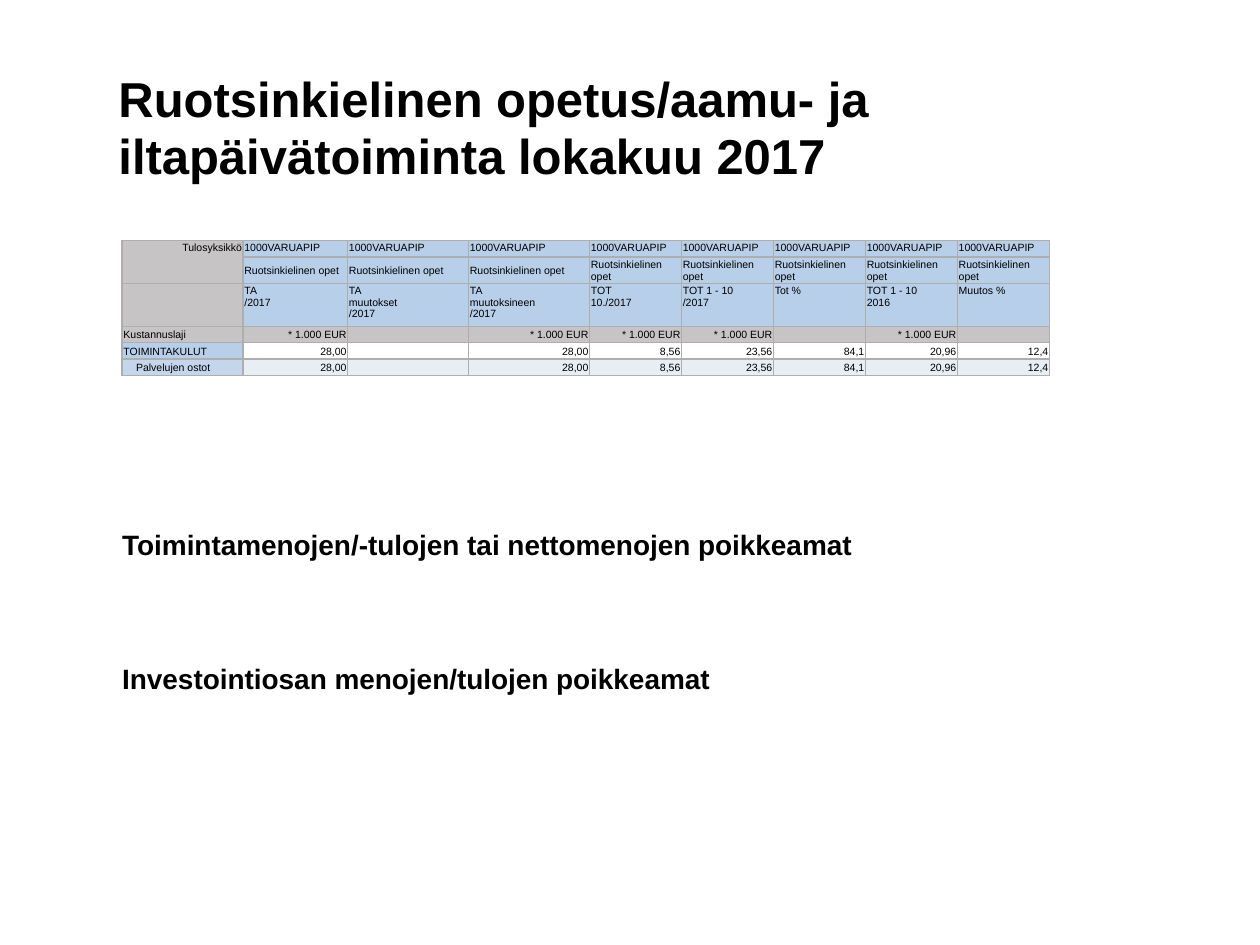
from lxml.etree import SubElement
from pptx import Presentation
from pptx.dml.color import RGBColor
from pptx.enum.text import MSO_ANCHOR as Anchor, PP_ALIGN as Align
from pptx.oxml.ns import qn
from pptx.util import Inches, Pt

BLUE, PALE_BLUE, GREY = "B7CFE8", "C3D6EB", "C6C4C4"
WHITE, PALE, BORDER, BLACK = "FFFFFF", "E9EEF4", "AEAEAE", "000000"


def colour(hex_value):
    return RGBColor.from_string(hex_value)


class BudgetSlide:
    font = "Arial"

    def __init__(self, deck):
        self.page = deck.slides.add_slide(deck.slide_layouts[6])

    def apply(self, target, values):
        for name, value in values.items():
            setattr(target, name, value)

    def style(self, para, size, bold=False):
        values = {"name": self.font, "size": Pt(size), "bold": bold}
        for span in para.runs:
            self.apply(span.font, values)
            span.font.color.rgb = colour(BLACK)
        # Line breaks and empty paragraphs carry their own text size
        for line_break in para._p.findall(qn("a:br")):
            SubElement(line_break, qn("a:rPr"), sz=str(size * 100))
        if not para.runs:
            SubElement(para._p, qn("a:endParaRPr"), sz=str(size * 100))

    def text(self, place, lines, size, frame_values, gap=0, line_height=None):
        box = self.page.shapes.add_textbox(*map(Inches, place))
        frame = box.text_frame
        margins = dict.fromkeys(
            ("margin_left", "margin_top", "margin_right", "margin_bottom"), 0)
        self.apply(frame, {"word_wrap": True, **margins, **frame_values})
        for index, line in enumerate(lines):
            para = frame.add_paragraph() if index else frame.paragraphs[0]
            para.text = line
            if index:
                para.space_before = Pt(gap)
            if line_height:
                para.line_spacing = Pt(line_height)
            self.style(para, size, bold=True)

    def table(self, left, top, widths, heights):
        shape = self.page.shapes.add_table(
            len(heights), len(widths), Inches(left), Inches(top),
            Inches(sum(widths)), Inches(sum(heights)))
        grid = shape.table
        self.apply(grid, {"first_row": False, "horz_banding": False})
        for column, width in zip(grid.columns, widths):
            column.width = Inches(width)
        for row, height in zip(grid.rows, heights):
            row.height = Inches(height)
        return grid

    def cell(self, cell, words, fill, align, anchor, indent=0.01):
        self.apply(cell, {
            "margin_left": Inches(indent), "margin_top": Inches(0.01),
            "margin_right": Inches(0.01), "margin_bottom": 0,
            "vertical_anchor": anchor})
        para = cell.text_frame.paragraphs[0]
        para.text = words
        para.alignment = align
        self.style(para, 6)
        self.borders(cell)
        cell.fill.solid()
        cell.fill.fore_color.rgb = colour(fill)

    def borders(self, cell):
        properties = cell._tc.get_or_add_tcPr()
        for side in ("lnL", "lnR", "lnT", "lnB"):
            line = SubElement(properties, qn(f"a:{side}"), w=str(Pt(1)))
            solid = SubElement(line, qn("a:solidFill"))
            SubElement(solid, qn("a:srgbClr"), val=BORDER)


deck = Presentation()
deck.slide_width, deck.slide_height = Inches(10), Inches(7.5)
slide = BudgetSlide(deck)

# Title
slide.text((0.94, 0.55, 8.11, 1.09),
           ["Ruotsinkielinen opetus/aamu- ja iltapäivätoiminta lokakuu 2017"],
           28, {"margin_right": Inches(0.1)}, line_height=33)

# Headings for the deviations
slide.text((0.97, 3.64, 8.6, 2.96),
           ["Toimintamenojen/-tulojen tai nettomenojen poikkeamat",
            "Investointiosan menojen/tulojen poikkeamat"],
           16, {"margin_top": Inches(0.55)}, gap=57)

# Budget table: words, label fill, value fill, value alignment, anchor
unit = "* 1.000 EUR"
amounts = ["28,00", "", "28,00", "8,56", "23,56", "84,1", "20,96", "12,4"]
periods = ["TA\n/2017", "TA\nmuutokset\n/2017", "TA\nmuutoksineen\n/2017",
           "TOT\n10./2017", "TOT 1 - 10\n/2017", "Tot %",
           "TOT 1 - 10\n2016", "Muutos %"]
rows = [
    (["Tulosyksikkö"] + ["1000VARUAPIP"] * 8, GREY, BLUE, Align.LEFT, Anchor.TOP),
    ([""] + ["Ruotsinkielinen opet"] * 8, GREY, BLUE, Align.LEFT, Anchor.MIDDLE),
    ([""] + periods, GREY, BLUE, Align.LEFT, Anchor.TOP),
    (["Kustannuslaji", unit, "", unit, unit, unit, "", unit, ""],
     GREY, GREY, Align.RIGHT, Anchor.MIDDLE),
    (["TOIMINTAKULUT"] + amounts, BLUE, WHITE, Align.RIGHT, Anchor.MIDDLE),
    (["Palvelujen ostot"] + amounts, PALE_BLUE, PALE, Align.RIGHT, Anchor.MIDDLE),
]
grid = slide.table(0.97, 1.91, [0.96, 0.83, 0.96, 0.96] + [0.73] * 5,
                   [0.13, 0.2, 0.34, 0.13, 0.13, 0.13])
for r, (words, label_fill, value_fill, value_align, anchor) in enumerate(rows):
    for c, word in enumerate(words):
        fill = value_fill if c else label_fill
        align = value_align if c else Align.LEFT
        if (r, c) == (0, 0):
            align = Align.RIGHT
        indent = 0.11 if word == "Palvelujen ostot" else 0.01
        slide.cell(grid.cell(r, c), word, fill, align, anchor, indent)
grid.cell(0, 0).merge(grid.cell(1, 0))

deck.save("out.pptx")
